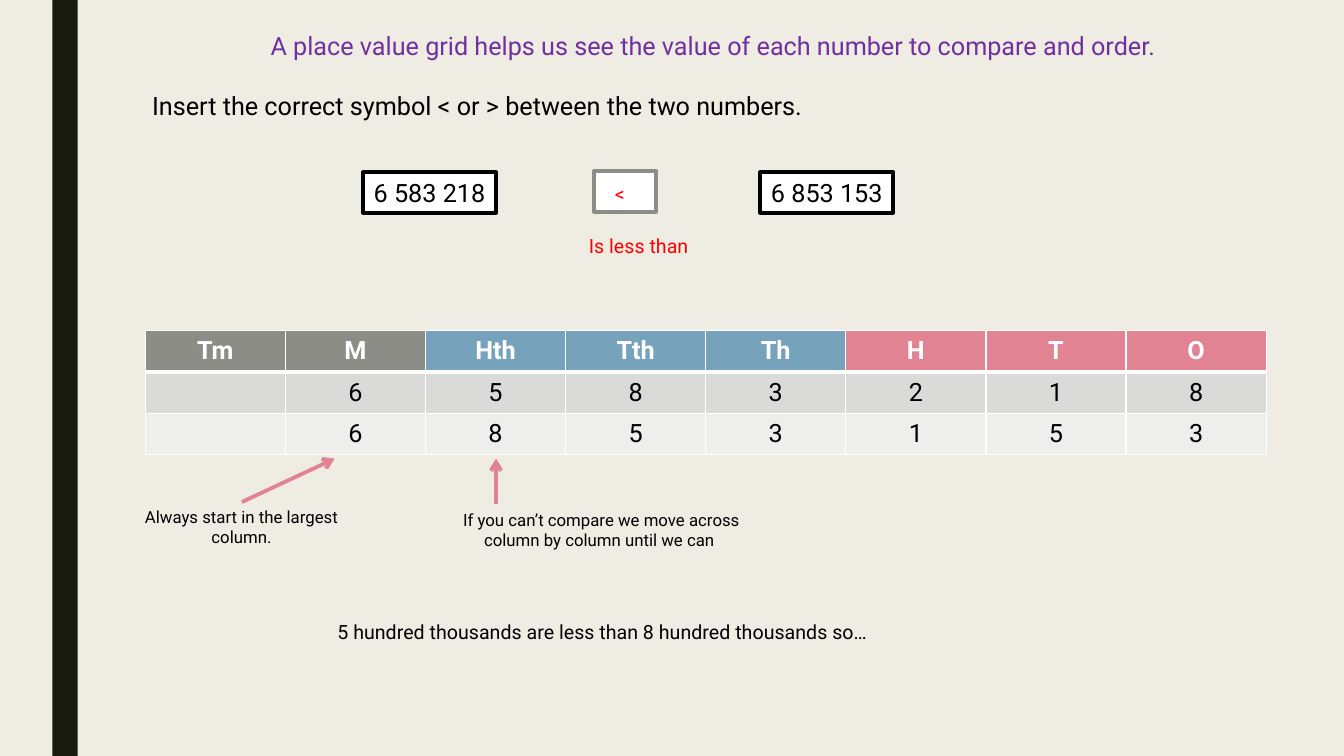
from dataclasses import dataclass

from lxml import etree
from pptx import Presentation
from pptx.dml.color import RGBColor
from pptx.enum.shapes import MSO_CONNECTOR, MSO_SHAPE
from pptx.enum.text import MSO_ANCHOR, MSO_AUTO_SIZE, PP_ALIGN
from pptx.oxml.ns import qn
from pptx.util import Inches, Pt

LEFT, CENTER = PP_ALIGN.LEFT, PP_ALIGN.CENTER
TOP, MIDDLE = MSO_ANCHOR.TOP, MSO_ANCHOR.MIDDLE
TITLE_ONLY = 5


@dataclass(frozen=True)
class Theme:
    font: str = "Roboto"
    large: int = 18
    medium: int = 14
    small: int = 12
    outline: float = 2.75
    background: str = "EFEDE3"
    sidebar: str = "191B0E"
    white: str = "FFFFFF"
    black: str = "000000"
    purple: str = "7030A0"
    red: str = "FF0000"
    grey: str = "8C8D86"
    blue: str = "77A2BB"
    pink: str = "E28394"
    bands: tuple = ("DADBD9", "EEEEED")


THEME = Theme()

# Content; positions are left, top, width, height in inches
HEADING = "A place value grid helps us see the value of each number to compare and order. "
HEADING_AREA = (2.08, 0.25, 10.05, 0.4)

COLUMNS = [
    ("Tm", THEME.grey), ("M", THEME.grey),
    ("Hth", THEME.blue), ("Tth", THEME.blue), ("Th", THEME.blue),
    ("H", THEME.pink), ("T", THEME.pink), ("O", THEME.pink),
]
NUMBERS = ["6 583 218", "6 853 153"]
NUMBER_LEFTS = [3.6, 7.54]
ANSWER_AREA = (5.89, 1.7, 0.62, 0.4)

LABELS = [
    ("Insert the correct symbol < or > between the two numbers.",
     (1.41, 0.85, 6.79, 0.4), THEME.large, THEME.black, LEFT, False),
    ("Always start in the largest column.",
     (1.25, 4.98, 2.29, 0.5), THEME.small, THEME.black, CENTER, True),
    ("If you can’t compare we move across column by column until we can ",
     (4.2, 5.01, 3.53, 0.5), THEME.small, THEME.black, CENTER, True),
    ("5 hundred thousands are less than 8 hundred thousands so…",
     (1.83, 6.1, 8.29, 0.34), THEME.medium, THEME.black, CENTER, True),
    ("<", (6, 1.76, 0.27, 0.34), THEME.medium, THEME.red, CENTER, True),
    ("Is less than", (4.72, 2.27, 3.23, 0.34), THEME.medium, THEME.red, CENTER, True),
]
ARROWS = [((2.4, 4.98), (3.32, 4.55)), ((4.92, 5), (4.92, 4.55))]

GRID_LEFT, GRID_TOP = 1.44, 3.28
COLUMN_WIDTH, ROW_HEIGHT = 1.39, 0.41


def color(value):
    return RGBColor.from_string(value)


def inches(values):
    return [Inches(value) for value in values]


def write(frame, text, size, ink, align=CENTER, bold=False):
    para = frame.paragraphs[0]
    para.alignment = align
    span = para.add_run()
    span.text = text
    span.font.name = THEME.font
    span.font.size = Pt(size)
    span.font.bold = bold
    span.font.color.rgb = color(ink)


def add_box(page, area, fill, outline=None):
    box = page.shapes.add_shape(MSO_SHAPE.RECTANGLE, *inches(area))
    box.shadow.inherit = False
    box.fill.solid()
    box.fill.fore_color.rgb = color(fill)
    if outline:
        box.line.color.rgb = color(outline)
        box.line.width = Pt(THEME.outline)
    else:
        box.line.fill.background()
    return box


def add_label(page, text, area, size, ink, align, wrap):
    frame = page.shapes.add_textbox(*inches(area)).text_frame
    frame.word_wrap = wrap
    write(frame, text, size, ink, align)


def add_arrow(page, start, end):
    arrow = page.shapes.add_connector(
        MSO_CONNECTOR.STRAIGHT, *inches(start), *inches(end))
    arrow.line.color.rgb = color(THEME.pink)
    arrow.line.width = Pt(THEME.outline)
    etree.SubElement(arrow.line._get_or_add_ln(), qn("a:tailEnd"), type="arrow")
    etree.SubElement(arrow._element.spPr, qn("a:effectLst"))


def set_borders(cell, top, bottom):
    properties = cell._tc.get_or_add_tcPr()
    sides = [("a:lnL", 1), ("a:lnR", 1), ("a:lnT", top), ("a:lnB", bottom)]
    for position, (side, width) in enumerate(sides):
        line = etree.Element(qn(side), w=str(Pt(width)))
        fill = etree.SubElement(line, qn("a:solidFill"))
        etree.SubElement(fill, qn("a:srgbClr"), val=THEME.white)
        properties.insert(position, line)


def fill_cell(cell, text, fill, ink, row):
    cell.fill.solid()
    cell.fill.fore_color.rgb = color(fill)
    cell.vertical_anchor = MIDDLE
    set_borders(cell, top=3 if row == 1 else 1, bottom=3 if row == 0 else 1)
    if text:
        write(cell.text_frame, text, THEME.large, ink, bold=row == 0)


def add_grid(page):
    rows, columns = len(NUMBERS) + 1, len(COLUMNS)
    area = (GRID_LEFT, GRID_TOP, COLUMN_WIDTH * columns, ROW_HEIGHT * rows)
    table = page.shapes.add_table(rows, columns, *inches(area)).table
    for index, (name, fill) in enumerate(COLUMNS):
        fill_cell(table.cell(0, index), name, fill, THEME.white, 0)
    # Digits line up with the ones column on the right
    for row, number in enumerate(NUMBERS, 1):
        digits = number.replace(" ", "").rjust(columns)
        for index, digit in enumerate(digits):
            fill_cell(table.cell(row, index), digit.strip(),
                      THEME.bands[row - 1], THEME.black, row)


def main():
    deck = Presentation()
    deck.slide_width, deck.slide_height = inches((13.33, 7.5))
    page = deck.slides.add_slide(deck.slide_layouts[TITLE_ONLY])
    page.background.fill.solid()
    page.background.fill.fore_color.rgb = color(THEME.background)
    add_box(page, (0.52, 0, 0.25, 7.5), THEME.sidebar)

    # Heading
    title = page.shapes.title
    title.left, title.top, title.width, title.height = inches(HEADING_AREA)
    title.text_frame.auto_size = MSO_AUTO_SIZE.NONE
    title.text_frame.vertical_anchor = TOP
    write(title.text_frame, HEADING, THEME.large, THEME.purple)

    # Numbers to compare and the answer box
    for number, left in zip(NUMBERS, NUMBER_LEFTS):
        box = add_box(page, (left, 1.71, 1.32, 0.4), THEME.white, THEME.black)
        box.text_frame.word_wrap = False
        write(box.text_frame, number, THEME.large, THEME.black)
    add_box(page, ANSWER_AREA, THEME.white, THEME.grey)

    # Place value grid, explanations and arrows
    add_grid(page)
    for label in LABELS:
        add_label(page, *label)
    for start, end in ARROWS:
        add_arrow(page, start, end)

    deck.save("out.pptx")


if __name__ == "__main__":
    main()
